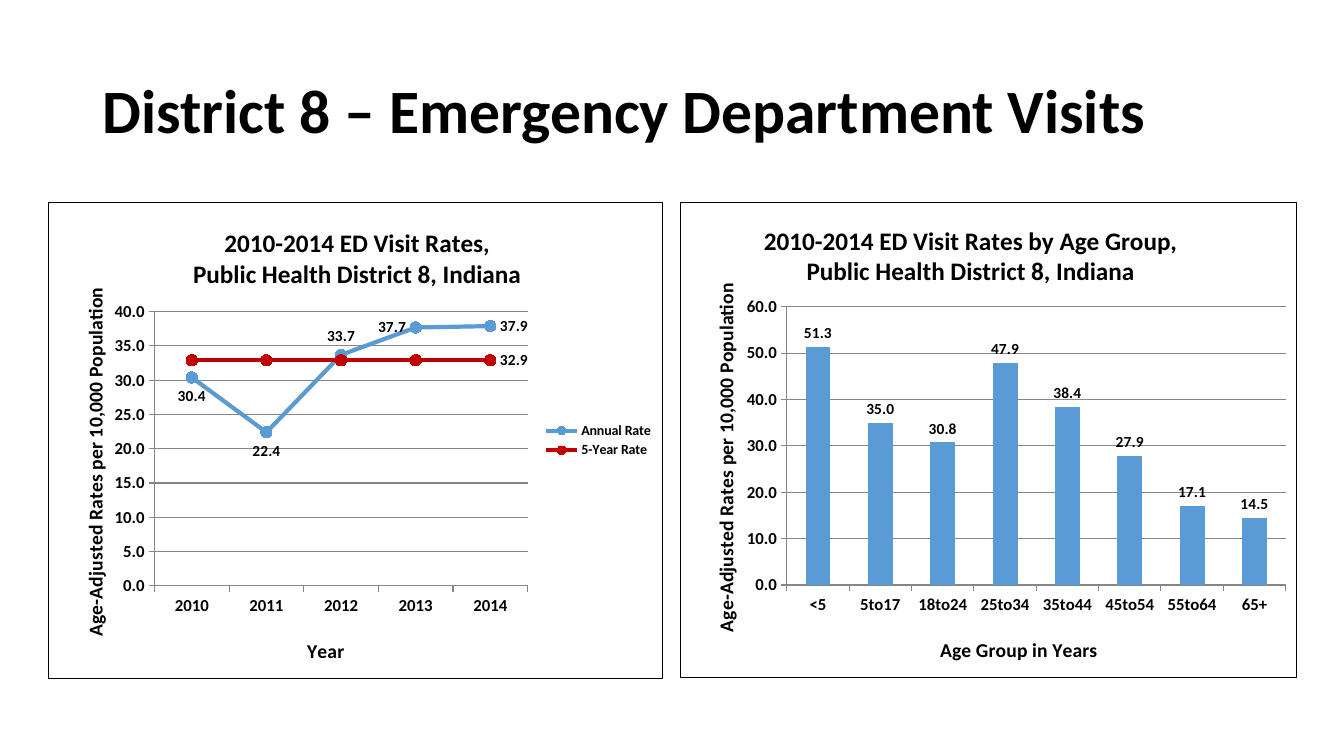
from lxml.etree import SubElement
from pptx import Presentation
from pptx.chart.data import CategoryChartData
from pptx.dml.color import RGBColor
from pptx.enum.chart import (XL_CHART_TYPE, XL_LABEL_POSITION, XL_LEGEND_POSITION,
                             XL_MARKER_STYLE, XL_TICK_MARK)
from pptx.enum.text import MSO_ANCHOR, MSO_AUTO_SIZE, PP_ALIGN
from pptx.oxml import parse_xml
from pptx.oxml.ns import nsdecls, qn
from pptx.util import Pt

BLUE, RED, BLACK, GREY = "5B9BD5", "C00000", "000000", "868686"
RATE_TITLE = "Age-Adjusted Rates per 10,000 Population"


def color(value):
    """Turn a hex string into a colour."""
    return RGBColor.from_string(value)


def assign(target, values):
    """Set each attribute named in the dict."""
    for name, value in values.items():
        setattr(target, name, value)


class SlideBuilder:
    """Hold the style and the current slide."""

    def __init__(self, slide, font_name="Calibri"):
        """Keep the slide and its font."""
        self.slide = slide
        self.font_name = font_name

    def style(self, font, size, bold=True):
        """Give a font the slide's style."""
        assign(font, {"name": self.font_name, "size": Pt(size), "bold": bold})
        font.color.rgb = color(BLACK)

    def line(self, line, value, width):
        """Colour a line and set its width."""
        line.color.rgb = color(value)
        line.width = Pt(width)

    def title(self, text, left, top, width, height):
        """Fill and place the slide title."""
        shape = self.slide.shapes.title
        assign(shape, {"left": Pt(left), "top": Pt(top),
                       "width": Pt(width), "height": Pt(height)})
        frame = shape.text_frame
        frame.text = text
        assign(frame, {"vertical_anchor": MSO_ANCHOR.MIDDLE, "word_wrap": True,
                       "auto_size": MSO_AUTO_SIZE.NONE})
        paragraph = frame.paragraphs[0]
        assign(paragraph, {"alignment": PP_ALIGN.LEFT, "line_spacing": 0.9})
        self.style(paragraph.runs[0].font, 44)

    def layout(self, element, **places):
        """Place a chart part by fractions of the chart."""
        for old in element.findall(qn("c:layout")):
            element.remove(old)
        layout = parse_xml(f"<c:layout {nsdecls('c')}/>")
        manual = SubElement(layout, qn("c:manualLayout"))
        if element.tag == qn("c:plotArea"):
            SubElement(manual, qn("c:layoutTarget"), val="inner")
        for name in ("xMode", "yMode"):
            SubElement(manual, qn(f"c:{name}"), val="edge")
        for name, value in places.items():
            SubElement(manual, qn(f"c:{name}"), val=str(value))
        overlay = element.find(qn("c:overlay"))
        if overlay is None:
            element.insert(0, layout)
        else:
            overlay.addprevious(layout)

    def chart_text(self, title, lines, size, x, y):
        """Write and place a chart title or an axis title."""
        frame = title.text_frame
        frame.text = "\n".join(lines)
        for paragraph in frame.paragraphs:
            self.style(paragraph.runs[0].font, size)
        self.layout(title._element, x=x, y=y)
        return frame

    def axis(self, axis, text, x, y):
        """Format an axis and its title."""
        assign(axis, {"major_tick_mark": XL_TICK_MARK.OUTSIDE,
                      "minor_tick_mark": XL_TICK_MARK.NONE})
        self.style(axis.tick_labels.font, 12)
        self.line(axis.format.line, GREY, 0.75)
        return self.chart_text(axis.axis_title, [text], 14, x, y)

    def chart(self, kind, box, categories, series, title, title_at, category_title,
              rate_at, maximum, unit, plot_area):
        """Add a framed chart with titles and axes."""
        data = CategoryChartData(number_format="0.0")
        data.categories = categories
        for name, values in series.items():
            data.add_series(name, values)
        chart = self.slide.shapes.add_chart(kind, *map(Pt, box), data).chart
        chart.has_legend = False
        self.style(chart.font, 10, False)
        chart.element.find(qn("c:chart")).addnext(parse_xml(
            f'<c:spPr {nsdecls("c", "a")}><a:noFill/><a:ln w="{Pt(0.75)}"><a:solidFill>'
            f'<a:srgbClr val="{BLACK}"/></a:solidFill></a:ln></c:spPr>'))
        self.chart_text(chart.chart_title, title, 18, *title_at)
        self.axis(chart.category_axis, category_title, 0.415, 0.905)
        rates = chart.value_axis
        frame = self.axis(rates, RATE_TITLE, *rate_at)
        frame._txBody.bodyPr.set("rot", "-5400000")
        assign(rates, {"minimum_scale": 0, "maximum_scale": maximum,
                       "major_unit": unit, "has_major_gridlines": True})
        assign(rates.tick_labels, {"number_format": "0.0",
                                   "number_format_is_linked": False})
        self.line(rates.major_gridlines.format.line, GREY, 0.75)
        self.layout(chart.element.xpath("c:chart/c:plotArea")[0], **plot_area)
        chart.plots[0].vary_by_categories = False
        return chart

    def labels(self, series, position, shown=True, points=None):
        """Label a series and place single labels."""
        labels = series.data_labels
        assign(labels, {"show_value": shown, "number_format": "0.0",
                        "number_format_is_linked": False})
        if shown:
            labels.position = position
        self.style(labels.font, 11)
        for index, place in (points or {}).items():
            label = series.points[index].data_label
            self.style(label.font, 11)
            label.position = place

    def marked_line(self, series, value):
        """Draw a series as a straight line with round markers."""
        series.smooth = False
        self.line(series.format.line, value, 3)
        marker = series.marker
        assign(marker, {"style": XL_MARKER_STYLE.CIRCLE, "size": 8})
        marker.format.fill.solid()
        marker.format.fill.fore_color.rgb = color(value)
        self.line(marker.format.line, value, 0.75)

    def legend(self, chart, **places):
        """Add a legend on the right."""
        chart.has_legend = True
        assign(chart.legend, {"position": XL_LEGEND_POSITION.RIGHT,
                              "include_in_layout": False})
        self.style(chart.legend.font, 10)
        self.layout(chart.legend._element, **places)


def main():
    """Build the slide and save it."""
    presentation = Presentation()
    assign(presentation, {"slide_width": Pt(960), "slide_height": Pt(540)})
    builder = SlideBuilder(presentation.slides.add_slide(presentation.slide_layouts[5]))
    builder.title("District 8 – Emergency Department Visits", 66, 28.8, 828, 104.4)

    place = XL_LABEL_POSITION
    yearly = builder.chart(
        XL_CHART_TYPE.LINE_MARKERS, (34.56, 144, 439.2, 341.28),
        ["2010", "2011", "2012", "2013", "2014"],
        {"Annual Rate": [30.4, 22.4, 33.7, 37.7, 37.9], "5-Year Rate": [32.9] * 5},
        ["2010-2014 ED Visit Rates,", "Public Health District 8, Indiana"], (0.23, 0.045),
        "Year", (0.047, 0.172), 40, 5, {"x": 0.172, "y": 0.23, "w": 0.608, "h": 0.575})
    annual, five_year = yearly.plots[0].series
    builder.marked_line(annual, BLUE)
    builder.marked_line(five_year, RED)
    builder.labels(annual, place.ABOVE, points={
        0: place.BELOW, 1: place.BELOW, 3: place.LEFT, 4: place.RIGHT})
    builder.labels(five_year, place.RIGHT, shown=False, points={4: place.RIGHT})
    builder.legend(yearly, x=0.8, y=0.455, w=0.19, h=0.09)

    by_age = builder.chart(
        XL_CHART_TYPE.COLUMN_CLUSTERED, (486, 144, 440.64, 340.56),
        ["<5", "5to17", "18to24", "25to34", "35to44", "45to54", "55to64", "65+"],
        {"Series 1": [51.3, 35, 30.8, 47.9, 38.4, 27.9, 17.1, 14.5]},
        ["2010-2014 ED Visit Rates by Age Group,", "Public Health District 8, Indiana"],
        (0.13, 0.04), "Age Group in Years", (0.045, 0.163), 60, 10,
        {"x": 0.172, "y": 0.22, "w": 0.81, "h": 0.585})
    by_age.plots[0].gap_width = 150
    columns = by_age.plots[0].series[0]
    columns.format.fill.solid()
    columns.format.fill.fore_color.rgb = color(BLUE)
    builder.labels(columns, place.OUTSIDE_END)
    presentation.save("out.pptx")


if __name__ == "__main__":
    main()
